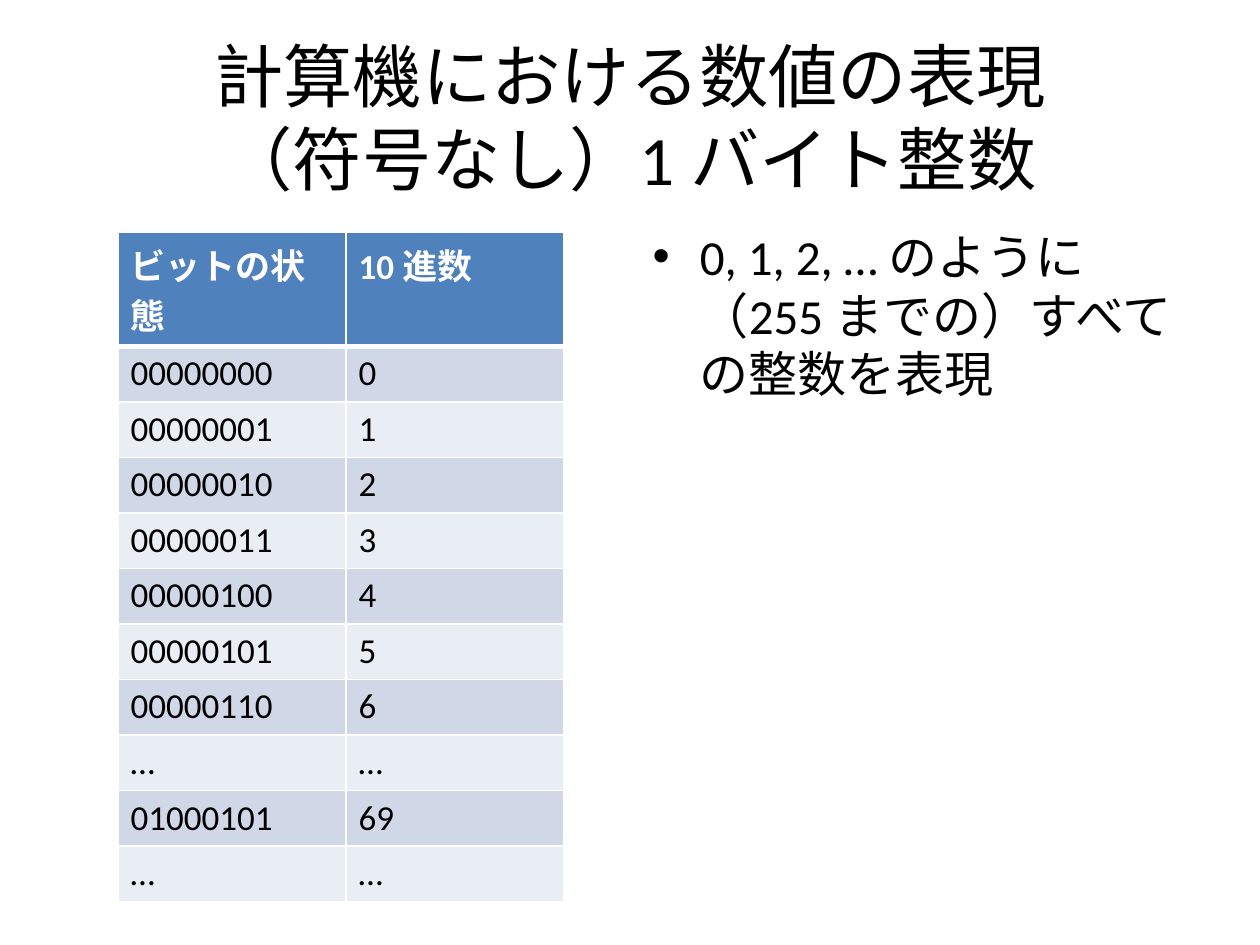
from lxml import etree
from pptx import Presentation
from pptx import util as u
from pptx.dml.color import RGBColor
from pptx.enum import text
from pptx.oxml.ns import qn

TITLE = "計算機における数値の表現\v（符号なし）1 バイト整数"
BULLET = "0, 1, 2, … のように（255 までの）すべての整数を表現"
HEADER = ("ビットの状態", "10 進数")
VALUES = [0, 1, 2, 3, 4, 5, 6, None, 69, None]  # None marks skipped values

FONT = "Calibri"
BLACK = RGBColor(0x00, 0x00, 0x00)
WHITE = RGBColor(0xFF, 0xFF, 0xFF)
HEADER_BLUE = RGBColor(0x4F, 0x81, 0xBD)
BANDS = (RGBColor(0xD0, 0xD8, 0xE8), RGBColor(0xE9, 0xED, 0xF4))

PX = u.Inches(1) // 126
TITLE_BOX = (63, 38, 1134, 157)
BODY_BOX = (640, 220, 557, 624)
TABLE_LEFT, TABLE_TOP = 118, 232
COLUMN_WIDTHS = (228, 218)
ROW_HEIGHT = 52


def format_text(frame, size, color=BLACK, bold=False):
    for paragraph in frame.paragraphs:
        for name, value in {"name": FONT, "size": u.Pt(size), "bold": bold}.items():
            setattr(paragraph.font, name, value)
            for run in paragraph.runs:
                setattr(run.font, name, value)
        for run in paragraph.runs:
            run.font.color.rgb = color


def fill_placeholder(shape, content, box, size, anchor):
    shape.left, shape.top, shape.width, shape.height = (n * PX for n in box)
    frame = shape.text_frame
    frame.text = content
    settings = {"word_wrap": True, "auto_size": text.MSO_AUTO_SIZE.NONE,
                "vertical_anchor": anchor}
    for name, value in settings.items():
        setattr(frame, name, value)
    format_text(frame, size)


def set_borders(cell, widths):
    """Draw white borders; widths are points keyed by side, in L, R, T, B order."""
    properties = cell._tc.get_or_add_tcPr()
    for index, (side, points) in enumerate(widths.items()):
        line = etree.Element(qn(f"a:ln{side}"), w=str(u.Pt(points)))
        fill = etree.SubElement(line, qn("a:solidFill"))
        etree.SubElement(fill, qn("a:srgbClr"), val=str(WHITE))
        properties.insert(index, line)


def add_bit_table(slide):
    rows = [HEADER] + [("…", "…") if value is None else (f"{value:08b}", str(value))
                       for value in VALUES]
    table = slide.shapes.add_table(
        len(rows), len(HEADER), TABLE_LEFT * PX, TABLE_TOP * PX,
        sum(COLUMN_WIDTHS) * PX, len(rows) * ROW_HEIGHT * PX).table
    for column, width in zip(table.columns, COLUMN_WIDTHS):
        column.width = width * PX
    for r, row in enumerate(rows):
        is_header = r == 0
        for c, content in enumerate(row):
            cell = table.cell(r, c)
            cell.text = content
            cell.fill.solid()
            cell.fill.fore_color.rgb = HEADER_BLUE if is_header else BANDS[(r - 1) % 2]
            format_text(cell.text_frame, 20, WHITE if is_header else BLACK, is_header)
            set_borders(cell, {"L": 1, "R": 1, "T": 3 if r == 1 else 1,
                               "B": 3 if is_header else 1})


def main():
    presentation = Presentation()
    presentation.slide_width, presentation.slide_height = u.Inches(10), u.Inches(7.5)
    slide = presentation.slides.add_slide(presentation.slide_layouts[1])
    fill_placeholder(slide.shapes.title, TITLE, TITLE_BOX, 39.6, text.MSO_ANCHOR.MIDDLE)
    fill_placeholder(slide.placeholders[1], BULLET, BODY_BOX, 28, text.MSO_ANCHOR.TOP)
    add_bit_table(slide)
    presentation.save("out.pptx")


if __name__ == "__main__":
    main()
